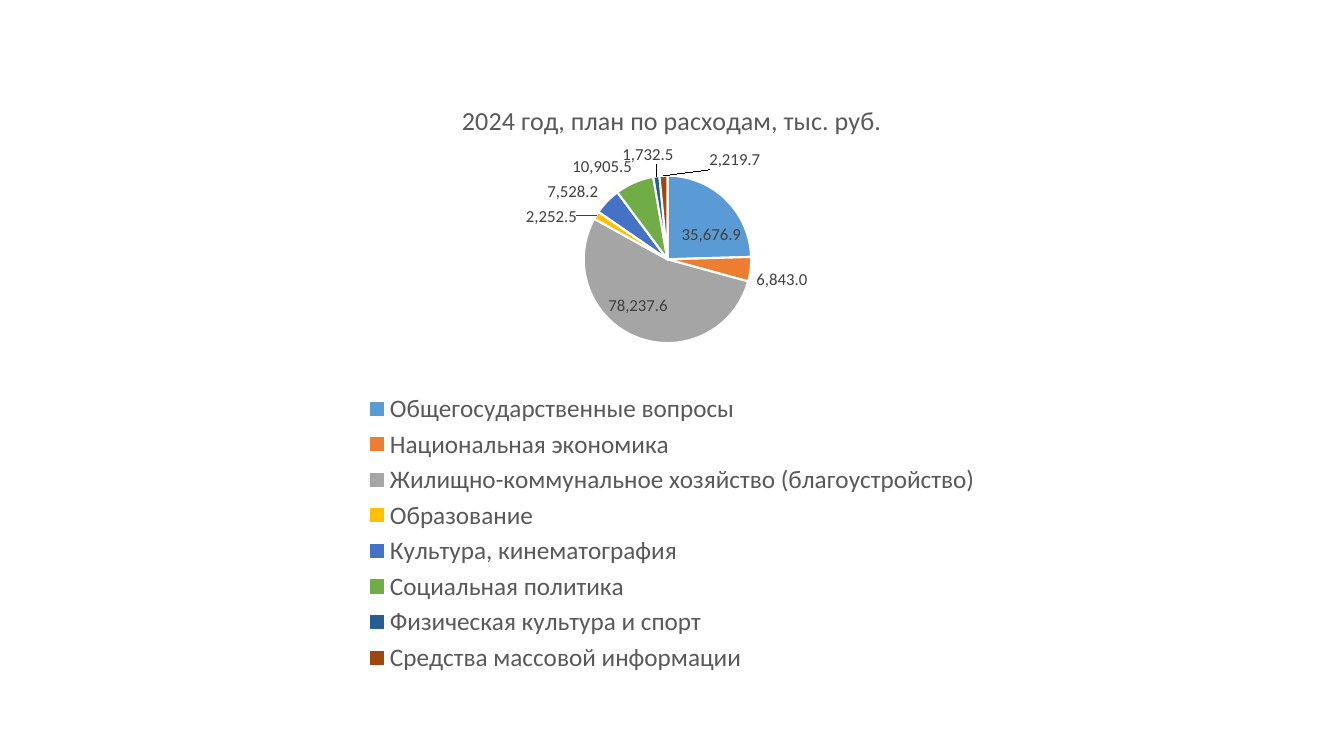
"""Build a slide with a pie chart of planned budget expenses for 2024."""
from dataclasses import dataclass

from pptx import Presentation
from pptx.chart.chart import Chart
from pptx.chart.data import CategoryChartData
from pptx.dml.color import RGBColor
from pptx.enum.chart import XL_CHART_TYPE, XL_LABEL_POSITION, XL_LEGEND_POSITION
from pptx.oxml import parse_xml
from pptx.oxml.ns import nsdecls
from pptx.text.text import Font
from pptx.util import Emu, Pt

EMU_PER_PX = 914400 / 100.8
FONT_NAME = "Calibri"
NUMBER_FORMAT = "#,##0.0"


@dataclass(frozen=True)
class Expense:
    name: str
    amount: float
    fill: str
    label_shift: tuple[float, float] | None = None


EXPENSES = [
    Expense("Общегосударственные вопросы", 35676.9, "5B9BD5"),
    Expense("Национальная экономика", 6843.0, "ED7D31"),
    Expense("Жилищно-коммунальное хозяйство (благоустройство)", 78237.6, "A5A5A5"),
    Expense("Образование", 2252.5, "FFC000"),
    Expense("Культура, кинематография", 7528.2, "4472C4"),
    Expense("Социальная политика", 10905.5, "70AD47", (0, 0)),
    Expense("Физическая культура и спорт", 1732.5, "255E91", (0.02, -0.01)),
    Expense("Средства массовой информации", 2219.7, "9E480E", (0.08, 0)),
]


def px(length: int) -> Emu:
    return Emu(round(length * EMU_PER_PX))


def color(value: str) -> RGBColor:
    return RGBColor.from_string(value)


def style_font(font: Font, size: float, fill: str) -> None:
    font.name = FONT_NAME
    font.size = Pt(size)
    font.bold = False
    font.color.rgb = color(fill)


def layout_xml(**settings: str | float):
    items = "".join(f'<c:{key} val="{value}"/>' for key, value in settings.items())
    return parse_xml(
        f'<c:layout {nsdecls("c")}><c:manualLayout>{items}</c:manualLayout></c:layout>'
    )


def add_title(chart: Chart, text: str) -> None:
    chart.has_title = True
    chart.chart_title.include_in_layout = False
    span = chart.chart_title.text_frame.paragraphs[0].add_run()
    span.text = text
    style_font(span.font, 18.6, "595959")


def add_legend(chart: Chart) -> None:
    chart.has_legend = True
    chart.legend.position = XL_LEGEND_POSITION.BOTTOM
    chart.legend.include_in_layout = False
    style_font(chart.legend.font, 18, "595959")


def place_pie(chart: Chart) -> None:
    plot_area = chart._chartSpace.chart.plotArea
    for layout in plot_area.xpath("c:layout"):
        plot_area.remove(layout)
    plot_area.insert(0, layout_xml(
        layoutTarget="inner", xMode="edge", yMode="edge", x=0.4, y=0.16, w=0.19, h=0.28
    ))


def style_slices(chart: Chart) -> None:
    series = chart.plots[0].series[0]
    for index, expense in enumerate(EXPENSES):
        piece = series.points[index].format
        piece.fill.solid()
        piece.fill.fore_color.rgb = color(expense.fill)
        piece.line.color.rgb = color("FFFFFF")
        piece.line.width = Pt(1.5)


def add_labels(chart: Chart) -> None:
    series = chart.plots[0].series[0]
    labels = series.data_labels
    labels.show_value = True
    labels.number_format = NUMBER_FORMAT
    labels.number_format_is_linked = False
    labels.position = XL_LABEL_POSITION.BEST_FIT
    style_font(labels.font, 12, "404040")

    for index, expense in enumerate(EXPENSES):
        if expense.label_shift is None:
            continue
        label = series.points[index].data_label
        label.position = XL_LABEL_POSITION.BEST_FIT
        style_font(label.font, 12, "404040")
        element = series._element.xpath(f'c:dLbls/c:dLbl[c:idx/@val="{index}"]')[0]
        shift_x, shift_y = expense.label_shift
        element.insert(1, layout_xml(x=shift_x, y=shift_y))
        element.insert(2, parse_xml(
            f'<c:numFmt {nsdecls("c")} formatCode="{NUMBER_FORMAT}" sourceLinked="0"/>'
        ))


def main() -> None:
    deck = Presentation()
    deck.slide_width, deck.slide_height = px(1344), px(756)
    page = deck.slides.add_slide(deck.slide_layouts[6])

    data = CategoryChartData(number_format=NUMBER_FORMAT)
    data.categories = [expense.name for expense in EXPENSES]
    data.add_series("Series 1", [expense.amount for expense in EXPENSES])
    chart = page.shapes.add_chart(
        XL_CHART_TYPE.PIE, px(224), px(80), px(896), px(598), data
    ).chart
    style_font(chart.font, 10, "000000")
    chart.plots[0].vary_by_categories = True

    add_title(chart, "2024 год, план по расходам, тыс. руб.")
    add_legend(chart)
    place_pie(chart)
    style_slices(chart)
    add_labels(chart)
    deck.save("out.pptx")


if __name__ == "__main__":
    main()
